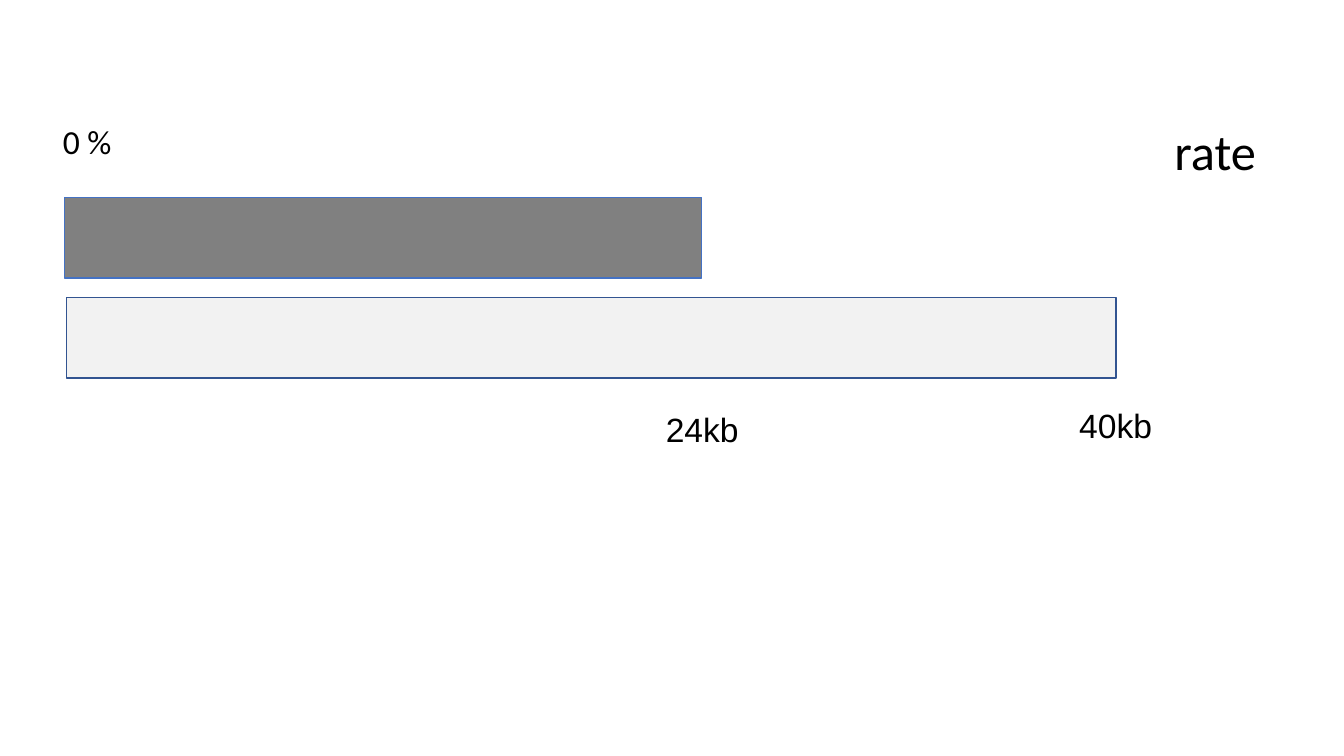
from dataclasses import dataclass

from pptx import Presentation
from pptx.dml.color import RGBColor as Rgb
from pptx.enum.shapes import MSO_SHAPE as Shape
from pptx.enum.text import MSO_AUTO_SIZE as Fit, PP_ALIGN as Align
from pptx.slide import Slide
from pptx.util import Inches, Pt

COLORS = {
    "pale": "F2F2F2",
    "gray": "808080",
    "navy": "325491",
    "blue": "4472C4",
    "black": "000000",
}
BAR_HIGH = 0.8
LABEL_WIDE = 1.37


@dataclass
class Bar:
    left: float
    top: float
    width: float
    fill: str
    line: str


@dataclass
class Label:
    text: str
    left: float
    top: float
    font: str
    height: float = 0.5
    size: int = 24
    align: Align = Align.CENTER


BARS = [
    Bar(0.66, 2.95, 10.41, "pale", "navy"),
    Bar(0.64, 1.96, 6.32, "gray", "blue"),
]
LABELS = [
    Label("40kb", 10.38, 3.97, "Arial"),
    Label("0 %", 0.18, 1.15, "Calibri"),
    Label("rate", 11.55, 1.14, "Calibri", 0.71, 36, Align.LEFT),
    Label("24kb", 6.28, 4.01, "Arial"),
]


def color(name: str) -> Rgb:
    return Rgb.from_string(COLORS[name])


def draw_bar(slide: Slide, bar: Bar) -> None:
    shape = slide.shapes.add_shape(
        Shape.RECTANGLE, Inches(bar.left), Inches(bar.top), Inches(bar.width), Inches(BAR_HIGH)
    )
    shape.shadow.inherit = False
    shape.fill.solid()
    shape.fill.fore_color.rgb = color(bar.fill)
    shape.line.color.rgb = color(bar.line)
    shape.line.width = Pt(1)


def draw_label(slide: Slide, label: Label) -> None:
    box = slide.shapes.add_textbox(
        Inches(label.left), Inches(label.top), Inches(LABEL_WIDE), Inches(label.height)
    )
    frame = box.text_frame
    frame.word_wrap = True
    frame.auto_size = Fit.SHAPE_TO_FIT_TEXT
    frame.text = label.text
    para = frame.paragraphs[0]
    para.alignment = label.align
    font = para.runs[0].font
    font.name = label.font
    font.size = Pt(label.size)
    font.color.rgb = color("black")


def main() -> None:
    deck = Presentation()
    deck.slide_width = Inches(13.33)
    deck.slide_height = Inches(7.5)
    slide = deck.slides.add_slide(deck.slide_layouts[6])
    for bar in BARS:
        draw_bar(slide, bar)
    for label in LABELS:
        draw_label(slide, label)
    deck.save("out.pptx")


if __name__ == "__main__":
    main()
